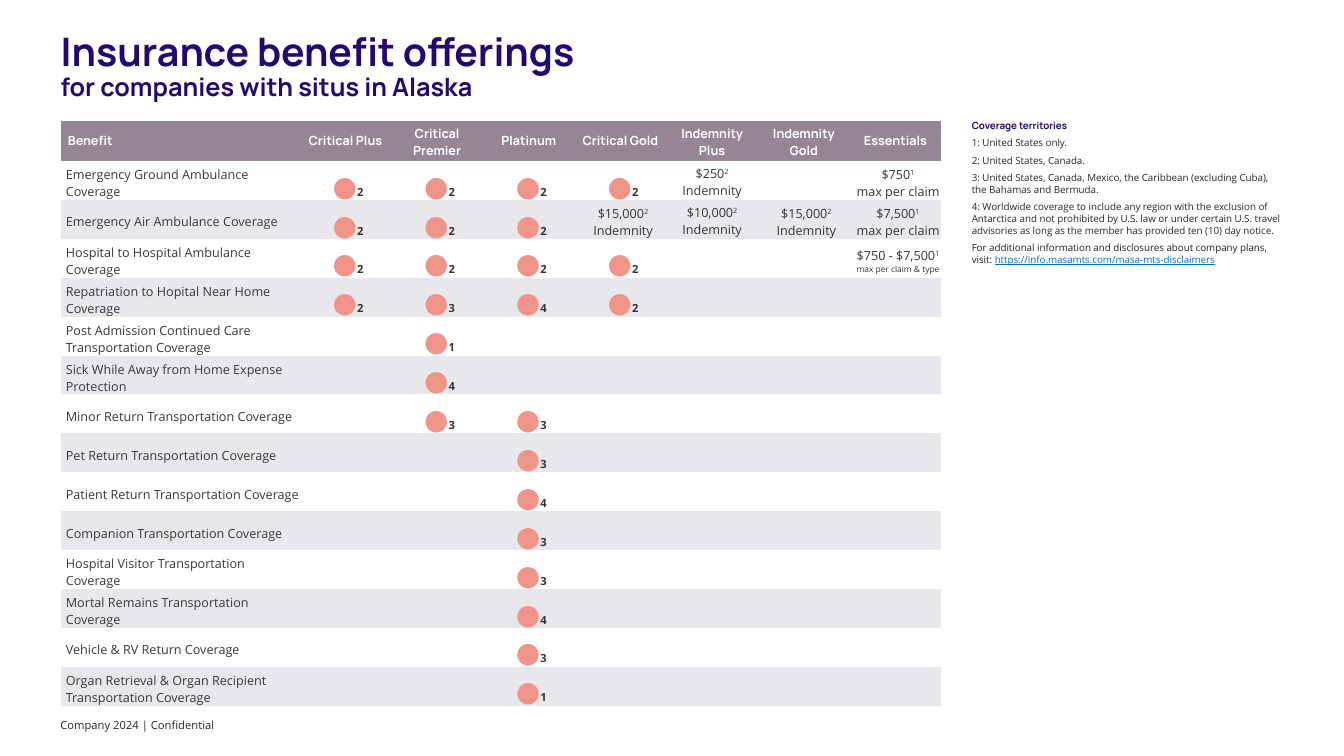
from pptx import Presentation
from pptx.dml.color import RGBColor
from pptx.enum.text import MSO_ANCHOR as ANCHOR, PP_ALIGN as ALIGN
from pptx.oxml.ns import qn
from pptx.util import Cm, Pt

HEAD, BODY = "Manrope", "Open Sans"
NAVY, INK, GREY, DARK, CORAL = "230871", "262626", "3A3838", "343433", "F09388"
WHITE, MAUVE, BAND, BLUE = "FFFFFF", "968693", "E8E7EB", "0071CE"
NO_STYLE = "{2D5ABB26-0587-4C30-8999-92F81FD0307C}"

WIDE = (0.18, 0.1, 0.18, 0.1)
TIGHT = (0.13, 0.13, 0, 0)
INDEMNITY_PLUS = 5

PLANS = ["Benefit", "Critical Plus", "Critical Premier", "Platinum", "Critical Gold",
         "Indemnity Plus", "Indemnity Gold", "Essentials"]

BENEFITS = [
    ("Emergency Ground Ambulance Coverage", "2222",
     {5: ("$250", "2", "Indemnity", 9), 7: ("$750", "1", "max per claim", 9)}),
    ("Emergency Air Ambulance Coverage", "222",
     {4: ("$15,000", "2", "Indemnity", 9), 5: ("$10,000", "2", "Indemnity", 9),
      6: ("$15,000", "2", "Indemnity", 9), 7: ("$7,500", "1", "max per claim", 9)}),
    ("Hospital to Hospital Ambulance Coverage", "2222",
     {7: ("$750 - $7,500", "1", "max per claim & type", 6)}),
    ("Repatriation to Hopital Near Home Coverage", "2342", {}),
    ("Post Admission Continued Care Transportation Coverage", "-1", {}),
    ("Sick While Away from Home Expense Protection", "-4", {}),
    ("Minor Return Transportation Coverage", "-33", {}),
    ("Pet Return Transportation Coverage", "--3", {}),
    ("Patient Return Transportation Coverage", "--4", {}),
    ("Companion Transportation Coverage", "--3", {}),
    ("Hospital Visitor Transportation Coverage", "--3", {}),
    ("Mortal Remains Transportation Coverage", "--4", {}),
    ("Vehicle & RV Return Coverage", "--3", {}),
    ("Organ Retrieval & Organ Recipient Transportation Coverage", "--1", {}),
]

TERRITORIES = [
    "1: United States only.",
    "2: United States, Canada.",
    "3: United States, Canada, Mexico, the Caribbean (excluding Cuba), the Bahamas and Bermuda.",
    "4: Worldwide coverage to include any region with the exclusion of Antarctica and not "
    "prohibited by U.S. law or under certain U.S. travel advisories as long as the member "
    "has provided ten (10) day notice.",
]


def rgb(value):
    return RGBColor.from_string(value)


def add_run(p, text, size, color, font=BODY, bold=False):
    r = p.add_run()
    r.text = text
    r.font.size = Pt(size)
    r.font.name = font
    r.font.bold = bold
    r.font.color.rgb = rgb(color)
    return r


def add_text_box(slide, left, top, width, height, inset=True):
    tf = slide.shapes.add_textbox(Cm(left), Cm(top), Cm(width), Cm(height)).text_frame
    tf.word_wrap = True
    if not inset:
        tf.margin_left = tf.margin_top = tf.margin_right = tf.margin_bottom = 0
    return tf


def add_title(slide):
    p = add_text_box(slide, 1.53, 0.82, 29.2, 2.03, inset=False).paragraphs[0]
    p.line_spacing = 0.9
    add_run(p, "Insurance benefit offerings ", 28, NAVY, HEAD, True)
    p.add_line_break()
    add_run(p, "for companies with situs in Alaska", 18, NAVY, HEAD, True)


def add_territories(slide):
    tf = add_text_box(slide, 24.49, 3.02, 7.85, 4.27, inset=False)
    add_run(tf.paragraphs[0], "Coverage territories", 7, NAVY, HEAD, True)
    for text in TERRITORIES:
        p = tf.add_paragraph()
        p.space_before = Pt(4)
        add_run(p, text, 7, INK)
    p = tf.add_paragraph()
    p.space_before = Pt(4)
    add_run(p, "For additional information and disclosures about company plans, visit: ", 7, "222222")
    r = add_run(p, "https://info.masamts.com/masa-mts-disclaimers", 7, BLUE)
    r.font.underline = True


def style_cell(cell, color, margins):
    cell.fill.solid()
    cell.fill.fore_color.rgb = rgb(color)
    cell.vertical_anchor = ANCHOR.MIDDLE
    (cell.margin_left, cell.margin_top,
     cell.margin_right, cell.margin_bottom) = map(Cm, margins)


def write_dot(cell, territory):
    p = cell.text_frame.paragraphs[0]
    p.alignment = ALIGN.CENTER
    add_run(p, "●", 20, CORAL)
    add_run(p, territory, 8, DARK, bold=True)


def write_amount(cell, amount, territory, note, note_size):
    tf = cell.text_frame
    p = tf.paragraphs[0]
    p.alignment = ALIGN.CENTER
    add_run(p, amount, 9, DARK)
    r = add_run(p, territory, 9, DARK)
    r.font._element.set("baseline", "30000")
    p = tf.add_paragraph()
    p.alignment = ALIGN.CENTER
    add_run(p, note, note_size, DARK)


def add_benefit_table(slide):
    s = slide.shapes.add_table(len(BENEFITS) + 1, len(PLANS),
                               Cm(1.53), Cm(3.05), Cm(22.19), Cm(14.67))
    next(s._element.iter(qn("a:tableStyleId"))).text = NO_STYLE
    table = s.table
    table.horz_banding = False
    for i, column in enumerate(table.columns):
        column.width = Cm(2.31 if i else 6.02)
    for i, row in enumerate(table.rows):
        row.height = Cm(0.98 if i else 1.01)

    for col, plan in enumerate(PLANS):
        cell = table.cell(0, col)
        style_cell(cell, MAUVE, WIDE)
        p = cell.text_frame.paragraphs[0]
        if col:
            p.alignment = ALIGN.CENTER
        add_run(p, plan, 9, WHITE, HEAD, True)

    for row, (benefit, dots, amounts) in enumerate(BENEFITS, 1):
        for col in range(len(PLANS)):
            style_cell(table.cell(row, col), WHITE if row % 2 else BAND,
                       WIDE if col == INDEMNITY_PLUS else TIGHT)
        add_run(table.cell(row, 0).text_frame.paragraphs[0], benefit, 9, GREY)
        for col, territory in enumerate(dots, 1):
            if territory != "-":
                write_dot(table.cell(row, col), territory)
        for col, amount in amounts.items():
            write_amount(table.cell(row, col), *amount)


def main():
    prs = Presentation()
    prs.slide_width, prs.slide_height = Cm(33.87), Cm(19.05)
    slide = prs.slides.add_slide(prs.slide_layouts[6])
    footer = add_text_box(slide, 1.27, 17.98, 20.14, 0.61)
    add_run(footer.paragraphs[0], "Company 2024 | Confidential", 8, INK)
    add_title(slide)
    add_territories(slide)
    add_benefit_table(slide)
    prs.save("out.pptx")


if __name__ == "__main__":
    main()
